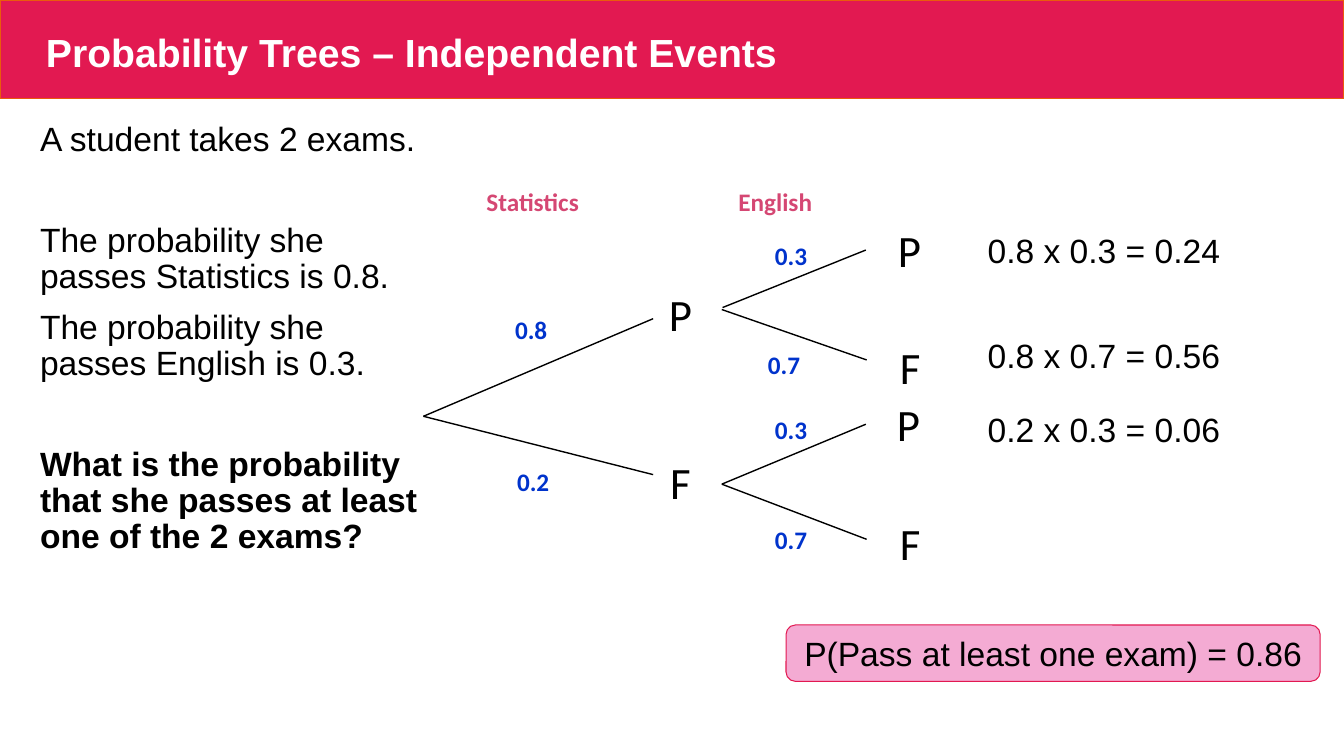
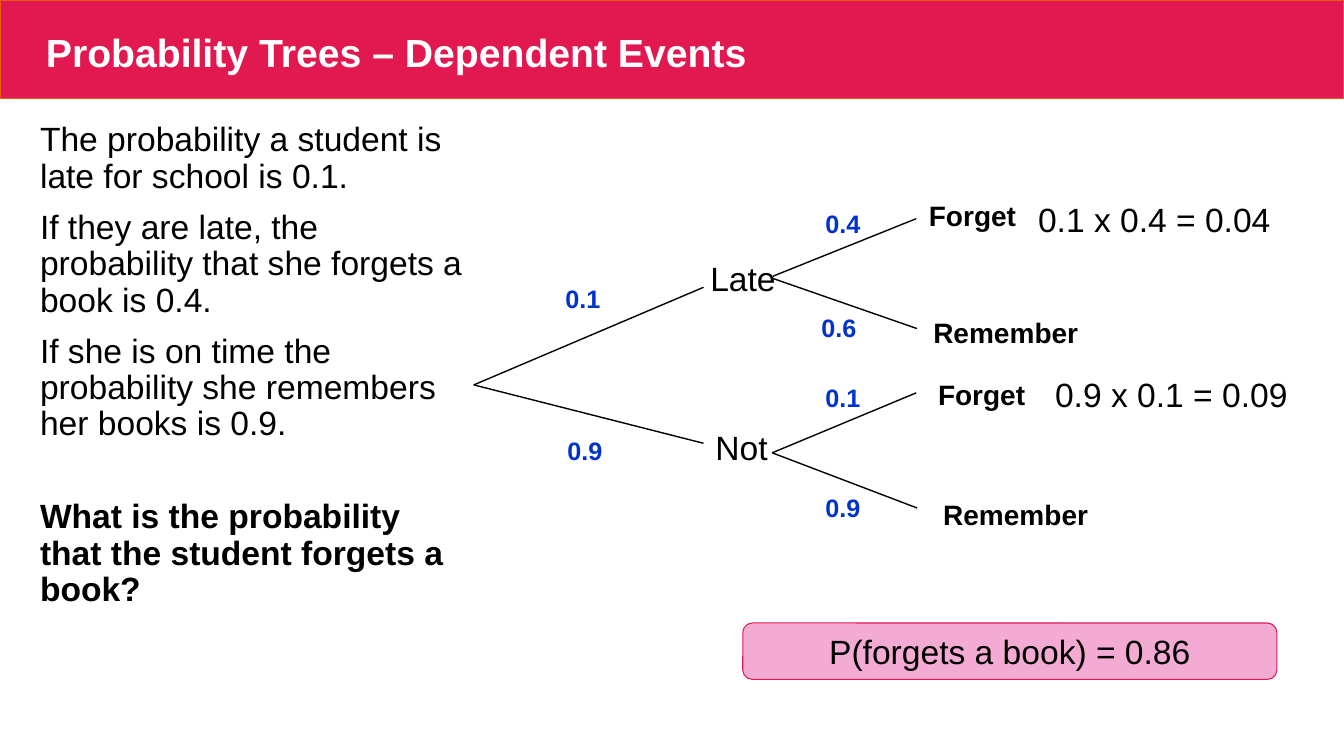
from lxml import etree
from pptx import Presentation
from pptx import util as u
from pptx.dml.color import RGBColor
from pptx.enum import shapes, text
from pptx.oxml.ns import qn

COLOURS = {
    "band": "E21951", "band edge": "EA5B0C", "white": "FFFFFF", "black": "000000",
    "chance": "0033CC", "heading": "D54773", "answer": "F4ABD3",
}

# Label styles: size in points, font, colour, bold, box height in cm
STYLES = {
    "title": (28, "Arial", "white", True, 1.55),
    "letter": (32, "Calibri", "black", False, 1.63),
    "sum": (24, "Arial", "black", False, 1.27),
    "outcome": (20, "Arial", "black", True, 1.12),
    "chance": (18, "Arial", "chance", True, 1.02),
    "chance narrow": (18, "Calibri", "chance", True, 1.02),
    "heading": (18, "Calibri", "heading", True, 1.02),
}

# The tree in cm; each slide moves it by its own shift
BRANCHES = [
    (10.67, 10.49, 16.46, 8.03), (10.67, 10.49, 16.46, 11.96),
    (18.21, 7.75, 21.82, 6.3), (18.19, 7.8, 21.84, 9.07),
    (18.19, 12.2, 21.82, 10.69), (18.19, 12.2, 21.84, 13.59),
]
CHANCE_SPOTS = [(12.73, 7.8), (12.78, 11.63), (19.28, 5.92), (19.28, 10.31), (19.28, 13.08)]

SLIDES = [
    {
        "title": "Probability Trees – Independent Events",
        "body size": (10.11, 15.72),
        "body": [
            ("A student takes 2 exams.", 0, False),
            ("The probability she passes Statistics is 0.8.", 46, False),
            ("The probability she passes English is 0.3.", 10, False),
            ("What is the probability that she passes at least one of the 2 exams?", 46, True),
        ],
        "shift": (0, 0),
        "chance style": ("chance narrow", 1.32),
        "chances": ["0.8", "0.2", "0.3", "0.3", "0.7"],
        "labels": [
            ("chance narrow", "0.7", 19.1, 8.69, 1.32),
            ("letter", "P", 16.61, 7.11, 1.14),
            ("letter", "F", 16.64, 11.33, 0.99),
            ("letter", "P", 22.38, 5.49, 1.14),
            ("letter", "F", 22.43, 8.43, 0.99),
            ("letter", "P", 22.35, 9.88, 1.14),
            ("letter", "F", 22.43, 12.88, 0.99),
            ("sum", "0.8 x 0.3 = 0.24", 24.64, 5.66, 6.43),
            ("sum", "0.8 x 0.7 = 0.56", 24.64, 8.31, 6.43),
            ("sum", "0.2 x 0.3 = 0.06", 24.64, 10.19, 6.43),
            ("heading", "Statistics", 12.01, 4.57, 2.87),
            ("heading", "English", 18.36, 4.57, 2.39),
        ],
        "answer": ("P(Pass at least one exam) = 0.86", 19.81, 15.75),
    },
    {
        "title": "Probability Trees – Dependent Events",
        "body size": (11.18, 15.37),
        "body": [
            ("The probability a student is late for school is 0.1.", 0, False),
            ("If they are late, the probability that she forgets a book is 0.4.", 10.8, False),
            ("If she is on time the probability she remembers her books is 0.9.", 10.8, False),
            ("What is the probability that the student forgets a book?", 40.5, True),
        ],
        "shift": (1.27, -0.79),
        "chance style": ("chance", 1.4),
        "chances": ["0.1", "0.9", "0.4", "0.1", "0.9"],
        "labels": [
            ("chance", "0.6", 20.45, 7.75, 1.4),
            ("sum", "Late", 17.65, 6.38, 2.18),
            ("sum", "Not", 17.78, 10.64, 1.83),
            ("outcome", "Forget", 23.16, 4.88, 2.72),
            ("outcome", "Remember", 23.27, 7.82, 4.19),
            ("outcome", "Forget", 23.39, 9.4, 2.72),
            ("outcome", "Remember", 23.52, 12.42, 4.19),
            ("sum", "0.1 x 0.4 = 0.04", 25.91, 4.88, 6.43),
            ("sum", "0.9 x 0.1 = 0.09", 26.34, 9.3, 6.43),
        ],
        "answer": ("P(forgets a book) = 0.86", 18.72, 15.7),
    },
]


def add_span(para, words, size, font, colour, bold):
    span = para.add_run()
    span.text = words
    span.font.size = u.Pt(size)
    span.font.name = font
    span.font.bold = bold
    span.font.color.rgb = RGBColor.from_string(COLOURS[colour])


def add_panel(page, kind, bounds, fill, edge, weight):
    """Add a filled and outlined shape without shadow; bounds are in cm."""
    panel = page.shapes.add_shape(kind, *map(u.Cm, bounds))
    panel.shadow.inherit = False
    panel.fill.solid()
    panel.fill.fore_color.rgb = RGBColor.from_string(COLOURS[fill])
    panel.line.color.rgb = RGBColor.from_string(COLOURS[edge])
    panel.line.width = u.Pt(weight)
    return panel


deck = Presentation()
deck.slide_width, deck.slide_height = u.Cm(33.87), u.Cm(19.05)

for content in SLIDES:
    page = deck.slides.add_slide(deck.slide_layouts[6])
    add_panel(page, shapes.MSO_SHAPE.RECTANGLE, (0, 0, 33.87, 2.49), "band", "band edge", 1)

    # Question on the left
    box = page.shapes.add_textbox(u.Cm(0.76), u.Cm(2.97), *map(u.Cm, content["body size"]))
    box.text_frame.word_wrap = True
    for index, (words, gap, bold) in enumerate(content["body"]):
        para = box.text_frame.add_paragraph() if index else box.text_frame.paragraphs[0]
        para.line_spacing = 0.9
        para.space_before = u.Pt(gap)
        add_span(para, words, 24, "Arial", "black", bold)

    # Tree
    right, down = content["shift"]
    for x1, y1, x2, y2 in BRANCHES:
        branch = page.shapes.add_connector(
            shapes.MSO_CONNECTOR.STRAIGHT,
            u.Cm(x1 + right), u.Cm(y1 + down), u.Cm(x2 + right), u.Cm(y2 + down))
        branch.line.color.rgb = RGBColor.from_string(COLOURS["black"])
        branch.line.width = u.Pt(1)
        etree.SubElement(branch._element.spPr, qn("a:effectLst"))

    # Title, chances and other one-line labels
    style, width = content["chance style"]
    chances = [(style, words, x + right, y + down, width)
               for words, (x, y) in zip(content["chances"], CHANCE_SPOTS)]
    title = ("title", content["title"], 0.91, 0.48, 32)
    for style, words, x, y, width in [title] + chances + content["labels"]:
        *look, height = STYLES[style]
        box = page.shapes.add_textbox(u.Cm(x), u.Cm(y), u.Cm(width), u.Cm(height))
        para = box.text_frame.paragraphs[0]
        add_span(para, words, *look)
        if style == "title":
            box.text_frame.word_wrap = True
            box.text_frame.vertical_anchor = text.MSO_ANCHOR.BOTTOM
            para.line_spacing = 0.9
        else:
            box.text_frame.word_wrap = False
            box.text_frame.auto_size = text.MSO_AUTO_SIZE.SHAPE_TO_FIT_TEXT

    # Answer
    words, x, y = content["answer"]
    answer = add_panel(page, shapes.MSO_SHAPE.ROUNDED_RECTANGLE, (x, y, 13.46, 1.42),
                       "answer", "band", 0.75)
    answer.text_frame.word_wrap = True
    para = answer.text_frame.paragraphs[0]
    para.alignment = text.PP_ALIGN.CENTER
    add_span(para, words, 24, "Arial", "black", False)

deck.save("out.pptx")
